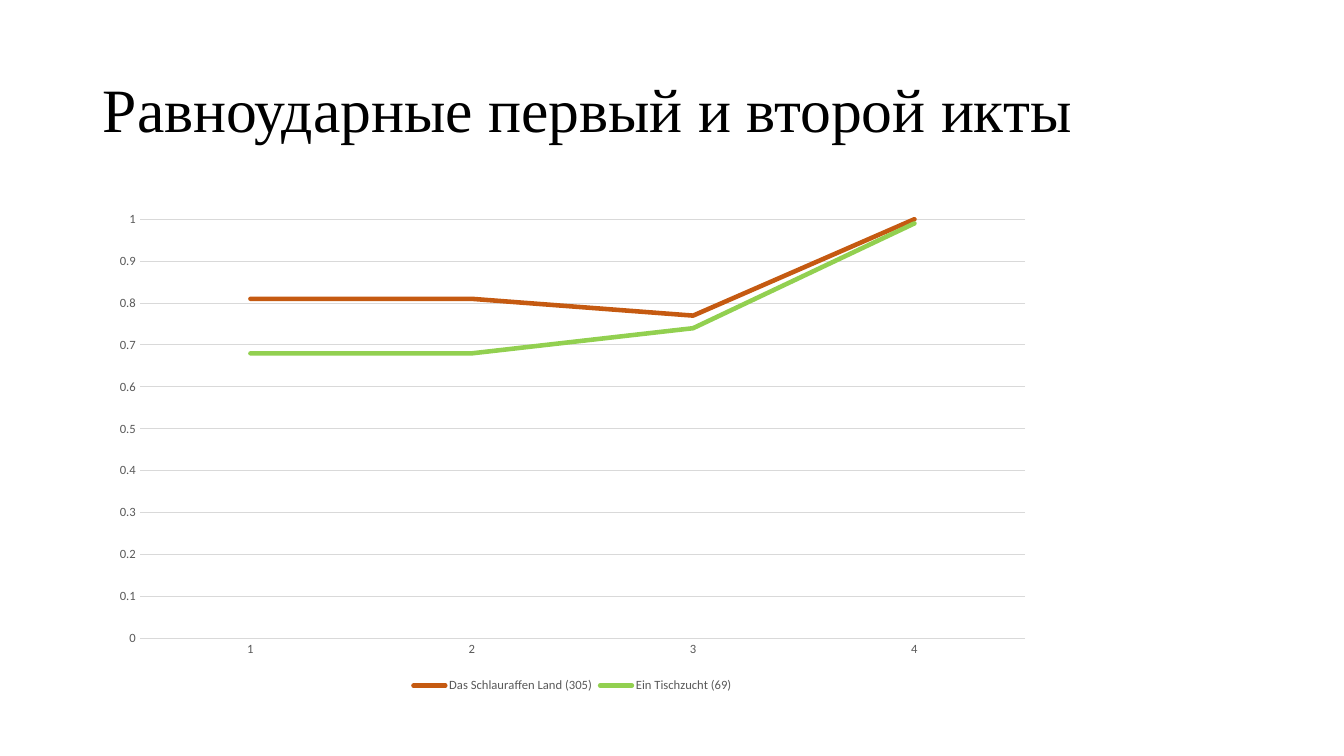
"""Build a slide with a line chart of stress frequency on four ictuses."""
from pptx import Presentation
from pptx.chart.data import CategoryChartData
from pptx.dml.color import RGBColor
from pptx.enum.chart import XL_CHART_TYPE as ChartType
from pptx.enum.chart import XL_LEGEND_POSITION as LegendPosition
from pptx.enum.chart import XL_MARKER_STYLE as MarkerStyle
from pptx.enum.chart import XL_TICK_MARK as TickMark
from pptx.enum.text import MSO_ANCHOR as Anchor
from pptx.util import Emu, Pt

HEADING = "Равноударные первый и второй икты"
ICTUSES = ["1", "2", "3", "4"]
POEMS = [
    ("Das Schlauraffen Land (305)", (0.81, 0.81, 0.77, 1), "orange"),
    ("Ein Tischzucht (69)", (0.68, 0.68, 0.74, 0.99), "green"),
]
COLORS = {
    "black": "000000",
    "label": "595959",
    "grid": "D9D9D9",
    "orange": "C55A11",
    "green": "92D050",
}
SLIDE_SIZE = (1344, 756)
HEADING_BOX = (93, 40, 1159, 146)
CHART_BOX = (101, 202, 943, 495)
EMU_PER_PX = 914400 / 100.8


def px(*lengths):
    return [Emu(round(length * EMU_PER_PX)) for length in lengths]


def rgb(name):
    return RGBColor.from_string(COLORS[name])


def style_font(font, face, size, color):
    font.name = face
    font.size = Pt(size)
    font.color.rgb = rgb(color)


def style_line(line, color, width):
    line.color.rgb = rgb(color)
    line.width = Pt(width)


def add_heading(slide):
    frame = slide.shapes.add_textbox(*px(*HEADING_BOX)).text_frame
    frame.word_wrap = True
    frame.vertical_anchor = Anchor.MIDDLE
    frame.text = HEADING
    paragraph = frame.paragraphs[0]
    paragraph.line_spacing = 0.9
    style_font(paragraph.runs[0].font, "Times New Roman", 44, "black")


def add_stress_chart(slide):
    frequencies = CategoryChartData()
    frequencies.categories = ICTUSES
    for poem, values, _ in POEMS:
        frequencies.add_series(poem, values)
    chart = slide.shapes.add_chart(
        ChartType.LINE, *px(*CHART_BOX), frequencies
    ).chart
    chart.has_title = False
    style_font(chart.font, "Calibri", 10, "black")

    ictus_axis, frequency_axis = chart.category_axis, chart.value_axis
    for axis in (ictus_axis, frequency_axis):
        axis.major_tick_mark = axis.minor_tick_mark = TickMark.NONE
        style_font(axis.tick_labels.font, "Calibri", 9, "label")
    style_line(ictus_axis.format.line, "grid", 0.75)
    frequency_axis.minimum_scale = 0
    frequency_axis.maximum_scale = 1
    frequency_axis.major_unit = 0.1
    frequency_axis.format.line.fill.background()
    style_line(frequency_axis.major_gridlines.format.line, "grid", 0.75)

    chart.has_legend = True
    chart.legend.position = LegendPosition.BOTTOM
    chart.legend.include_in_layout = False
    style_font(chart.legend.font, "Calibri", 9, "label")

    plot = chart.plots[0]
    plot.vary_by_categories = False
    for series, (_, _, color) in zip(plot.series, POEMS):
        series.smooth = False
        series.marker.style = MarkerStyle.NONE
        style_line(series.format.line, color, 3.25)
        series.format.line.fill
        series.format.line._get_or_add_ln().set("cap", "rnd")


def main():
    deck = Presentation()
    deck.slide_width, deck.slide_height = px(*SLIDE_SIZE)
    slide = deck.slides.add_slide(deck.slide_layouts[6])
    add_heading(slide)
    add_stress_chart(slide)
    deck.save("out.pptx")


if __name__ == "__main__":
    main()
